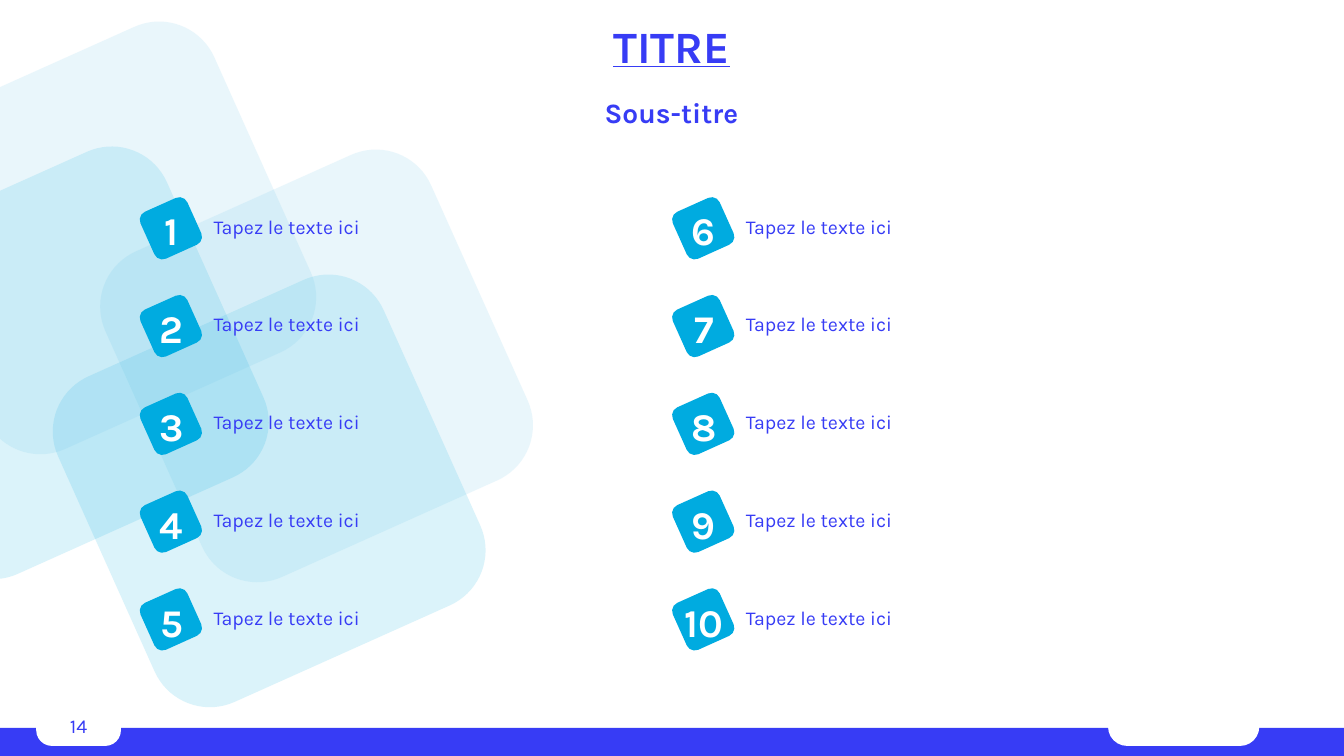
"""Build a numbered two-column list slide."""
from dataclasses import dataclass
from itertools import product
from math import cos, radians, sin, sqrt

from lxml import etree
from pptx import Presentation
from pptx.dml.color import RGBColor
from pptx.enum.shapes import MSO_SHAPE
from pptx.enum.text import MSO_ANCHOR, MSO_AUTO_SIZE, PP_ALIGN
from pptx.oxml.ns import qn
from pptx.util import Inches, Pt

ROUND, RECT = MSO_SHAPE.ROUNDED_RECTANGLE, MSO_SHAPE.RECTANGLE
TOP, MIDDLE = MSO_ANCHOR.TOP, MSO_ANCHOR.MIDDLE
LEFT, CENTER = PP_ALIGN.LEFT, PP_ALIGN.CENTER
FIXED = MSO_AUTO_SIZE.NONE
WIDTH, HEIGHT = 13.33, 7.5


@dataclass(frozen=True)
class Theme:
    """Hold the colours, type sizes and tilt of the slide."""
    font: str = "Karla"
    blue: str = "373CF5"
    cyan: str = "00ABE0"
    sky: str = "67C4E8"
    white: str = "FFFFFF"
    title: int = 32
    number: int = 28
    lead: int = 20
    body: int = 14
    alpha: int = 14
    tilt: float = 24.16


THEME = Theme()


def paint(shape, color):
    """Give a shape a flat fill without line or shadow."""
    shape.shadow.inherit = False
    shape.line.fill.background()
    shape.fill.solid()
    shape.fill.fore_color.rgb = RGBColor.from_string(color)


def place(shape, box):
    """Move and size a shape to a box in inches."""
    shape.left, shape.top, shape.width, shape.height = map(Inches, box)


def block(shapes, kind, box, color, adjust=None):
    """Add a filled preset shape."""
    shape = shapes.add_shape(kind, *map(Inches, box))
    paint(shape, color)
    if adjust is not None:
        shape.adjustments[0] = adjust
    return shape


def write(shape, text, size, color=THEME.blue, bold=False, align=CENTER,
          anchor=MIDDLE, space=None, wrap=True):
    """Set and format one paragraph of text."""
    frame = shape.text_frame
    frame.text = text
    frame.auto_size = FIXED
    frame.word_wrap = wrap
    frame.vertical_anchor = anchor
    line = frame.paragraphs[0]
    line.alignment = align
    line.space_before = Pt(0)
    line.line_spacing = space
    font = line.runs[0].font
    font.name, font.size, font.bold = THEME.font, Pt(size), bold
    font.color.rgb = RGBColor.from_string(color)
    return font


def outline(x, y, side, radius):
    """List the points of a tilted rounded square around a centre."""
    reach = (side - 2 * radius) / sqrt(2)
    points = []
    for corner in range(4):
        mid = 45 + 90 * corner - THEME.tilt
        cx = x + reach * cos(radians(mid))
        cy = y + reach * sin(radians(mid))
        for step in range(-45, 46, 5):
            turn = radians(mid + step)
            points.append((cx + radius * cos(turn), cy + radius * sin(turn)))
    return points


def clip(points, edge):
    """Cut a polygon along a vertical left edge."""
    kept = []
    for (ax, ay), (bx, by) in zip(points, points[1:] + points[:1]):
        if ax >= edge:
            kept.append((ax, ay))
        if (ax >= edge) != (bx >= edge):
            kept.append((edge, ay + (by - ay) * (edge - ax) / (bx - ax)))
    return kept


def tiles(slide, box):
    """Draw four sheer tiles on a slanted lattice inside the box."""
    left, top, width, height = box
    for col, row in product(range(2), range(2)):
        x = left + width / 2 + 0.47 * row - 2.15 * col
        y = top + height - 2.15 - 1.24 * row - 1.27 * col
        points = clip(outline(x, y, 3.54, 0.6), left)
        path = [(Inches(px), Inches(py)) for px, py in points]
        pen = slide.shapes.build_freeform(*path[0])
        pen.add_line_segments(path[1:])
        tile = pen.convert_to_shape()
        paint(tile, THEME.sky if row else THEME.cyan)
        color = tile._element.spPr.find(qn("a:solidFill"))[0]
        etree.SubElement(color, qn("a:alpha"), val=str(THEME.alpha * 1000))


def footer(slide, box, page):
    """Draw the bottom bar, its two white tabs and the page number."""
    left, top, width, height = box
    shapes = slide.shapes
    block(shapes, RECT, box, THEME.blue)
    tab = top - 0.2
    block(shapes, ROUND, (left + width - 2.34, tab, 1.5, 0.38),
          THEME.white, 0.5)
    block(shapes, ROUND, (left + 0.36, tab, 0.84, 0.38), THEME.white, 0.41)
    label = shapes.add_textbox(0, 0, 0, 0)
    place(label, (left + 0.29, tab + 0.01, 0.98, 0.3))
    write(label, page, THEME.body, anchor=TOP)


def heading(slide, box, title, lead):
    """Fill the title and subtitle placeholders."""
    left, top, width, height = box
    head, sub = slide.placeholders
    place(head, (left, top, width, 0.46))
    font = write(head, title, THEME.title, bold=True, anchor=TOP, space=0.9)
    font.underline = True
    place(sub, (left, top + height - 0.61, width, 0.61))
    write(sub, lead, THEME.lead, bold=True, space=0.9)


def entry(slide, box, number, text):
    """Draw a tilted number badge with its text beside it."""
    left, top, width, size = box
    shapes = slide.shapes.add_group_shape().shapes
    side = 0.51
    gap = (size - side) / 2
    badge = block(shapes, ROUND, (left + gap, top + gap, side, side),
                  THEME.cyan, 0.17)
    badge.rotation = -THEME.tilt
    digit = shapes.add_textbox(0, 0, 0, 0)
    place(digit, (left + 0.07, top + 0.04, 0.48, 0.57))
    write(digit, str(number), THEME.number, THEME.white, True, wrap=False)
    label = shapes.add_textbox(0, 0, 0, 0)
    place(label, (left + size + 0.02, top, width - size - 0.02, size))
    write(label, text, THEME.body, align=LEFT, space=Pt(14))


def entries(slide, box, texts, cols=2):
    """Lay numbered entries down each column of the box."""
    left, top, width, height = box
    rows = len(texts) // cols
    for index, text in enumerate(texts):
        col, row = divmod(index, rows)
        spot = (left + col * width / cols, top + row * height / rows,
                4.29, 0.61)
        entry(slide, spot, index + 1, text)


def main():
    """Build and save the slide."""
    deck = Presentation()
    deck.slide_width, deck.slide_height = Inches(WIDTH), Inches(HEIGHT)
    slide = deck.slides.add_slide(deck.slide_layouts[0])
    tiles(slide, (0, 0.22, 5.34, 6.8))
    footer(slide, (0, HEIGHT - 0.28, WIDTH, 0.28), "14")
    heading(slide, (0.89, 0.2, 11.54, 1.24), "TITRE", "Sous-titre")
    entries(slide, (1.39, 1.96, 10.56, 4.85), ["Tapez le texte ici"] * 10)
    deck.save("out.pptx")


if __name__ == "__main__":
    main()
